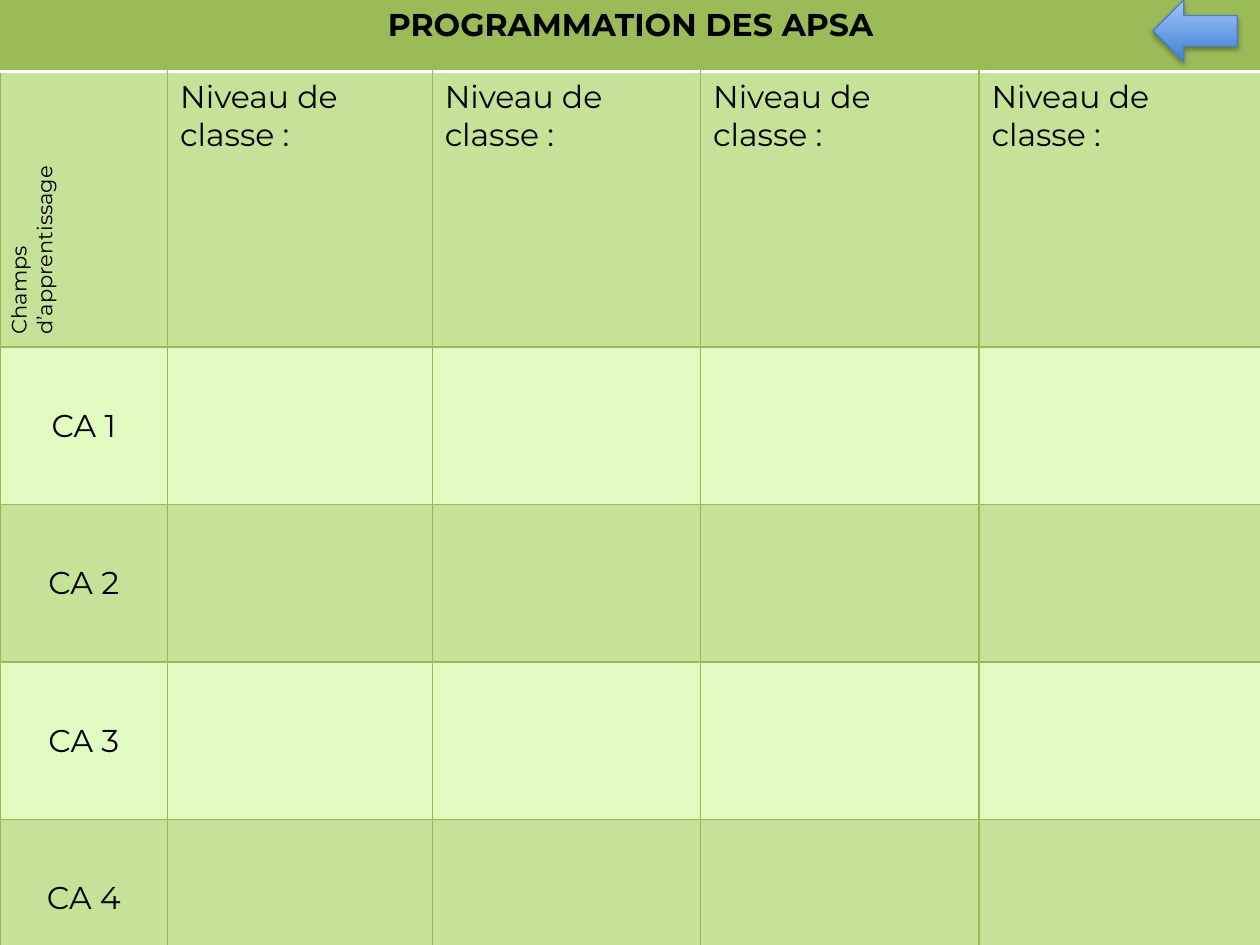
from dataclasses import dataclass

from lxml.etree import SubElement
from pptx import Presentation
from pptx.dml.color import RGBColor as Rgb
from pptx.enum.shapes import MSO_SHAPE as Shape
from pptx.enum.text import MSO_ANCHOR as Anchor, PP_ALIGN as Align
from pptx.oxml import parse_xml
from pptx.oxml.ns import nsdecls, qn
from pptx.util import Inches, Pt


@dataclass(frozen=True)
class Theme:
    font: str = "Montserrat"
    ink: str = "000000"
    header: str = "9BBB59"
    dark_band: str = "C6E298"
    light_band: str = "E2FBC2"
    grid: str = "98B955"
    rule: str = "FFFFFF"
    arrow_low: str = "3F80CE"
    arrow_high: str = "A4C4FF"
    arrow_line: str = "4B7EBC"
    body_size: int = 18
    small_size: int = 12
    thin: float = 0.75
    thick: float = 2


THEME = Theme()
COLUMNS = [1.33, 2.1, 2.13, 2.21, 2.24]
ROWS = [0.57, 1.92] + [1.25] * 4
FIELDS = ["CA 1", "CA 2", "CA 3", "CA 4"]
LEVELS = ["Niveau de classe :"] * (len(COLUMNS) - 1)


def border_cell(cell, bottom=(THEME.grid, THEME.thin)):
    properties = cell._tc.get_or_add_tcPr()
    grid = (THEME.grid, THEME.thin)
    edges = {"lnL": grid, "lnR": grid, "lnT": grid, "lnB": bottom}
    for index, (edge, (color, width)) in enumerate(edges.items()):
        line = parse_xml(
            f'<a:{edge} {nsdecls("a")} w="{Pt(width)}"><a:solidFill>'
            f'<a:srgbClr val="{color}"/></a:solidFill></a:{edge}>'
        )
        properties.insert(index, line)


def paint_cell(cell, color):
    cell.fill.solid()
    cell.fill.fore_color.rgb = Rgb.from_string(color)


def write_cell(cell, wording, size=THEME.body_size, bold=False, align=Align.LEFT):
    cell.text_frame.text = wording
    paragraph = cell.text_frame.paragraphs[0]
    paragraph.alignment = align
    for run in paragraph.runs:
        run.font.name = THEME.font
        run.font.size = Pt(size)
        run.font.bold = bold
        run.font.color.rgb = Rgb.from_string(THEME.ink)


def add_programme(slide, left, top, width, height):
    programme = slide.shapes.add_table(
        len(ROWS), len(COLUMNS), left, top, width, height
    ).table
    for column, breadth in zip(programme.columns, COLUMNS):
        column.width = Inches(breadth)
    for row, depth in zip(programme.rows, ROWS):
        row.height = Inches(depth)

    header_rule = (THEME.rule, THEME.thick)
    for index, row in enumerate(programme.rows):
        band = THEME.dark_band if index % 2 else THEME.light_band
        for cell in row.cells:
            paint_cell(cell, band if index else THEME.header)
            if index:
                border_cell(cell)
            else:
                border_cell(cell, bottom=header_rule)

    title = programme.cell(0, 0)
    title.merge(programme.cell(0, len(COLUMNS) - 1))
    write_cell(title, "PROGRAMMATION DES APSA", bold=True, align=Align.CENTER)

    corner = programme.cell(1, 0)
    write_cell(corner, "Champs d’apprentissage", THEME.small_size)
    corner._tc.get_or_add_tcPr().set("vert", "vert270")

    for column, level in enumerate(LEVELS, 1):
        write_cell(programme.cell(1, column), level)
    for row, field in enumerate(FIELDS, 2):
        label = programme.cell(row, 0)
        write_cell(label, field, align=Align.CENTER)
        label.vertical_anchor = Anchor.MIDDLE


def add_back_arrow(slide, left, top, width, height):
    arrow = slide.shapes.add_shape(Shape.LEFT_ARROW, left, top, width, height)
    arrow.fill.gradient()
    arrow.fill.gradient_angle = 90
    for stop, color in zip(
        arrow.fill.gradient_stops, (THEME.arrow_low, THEME.arrow_high)
    ):
        stop.color.rgb = Rgb.from_string(color)
    arrow.line.color.rgb = Rgb.from_string(THEME.arrow_line)
    arrow.line.width = Pt(THEME.thin)

    arrow.shadow.inherit = False
    effects = arrow._element.spPr.find(qn("a:effectLst"))
    shadow = SubElement(
        effects, qn("a:outerShdw"), blurRad=str(Pt(3.1)), dist=str(Pt(1.8)),
        dir="5400000", rotWithShape="0",
    )
    tint = SubElement(shadow, qn("a:srgbClr"), val=THEME.ink)
    SubElement(tint, qn("a:alpha"), val="35000")


def main():
    deck = Presentation()
    deck.slide_width, deck.slide_height = Inches(10), Inches(7.5)
    slide = deck.slides.add_slide(deck.slide_layouts[6])
    add_programme(slide, 0, 0, deck.slide_width, deck.slide_height)
    add_back_arrow(slide, Inches(9.15), 0, Inches(0.67), Inches(0.49))
    deck.save("out.pptx")


if __name__ == "__main__":
    main()
